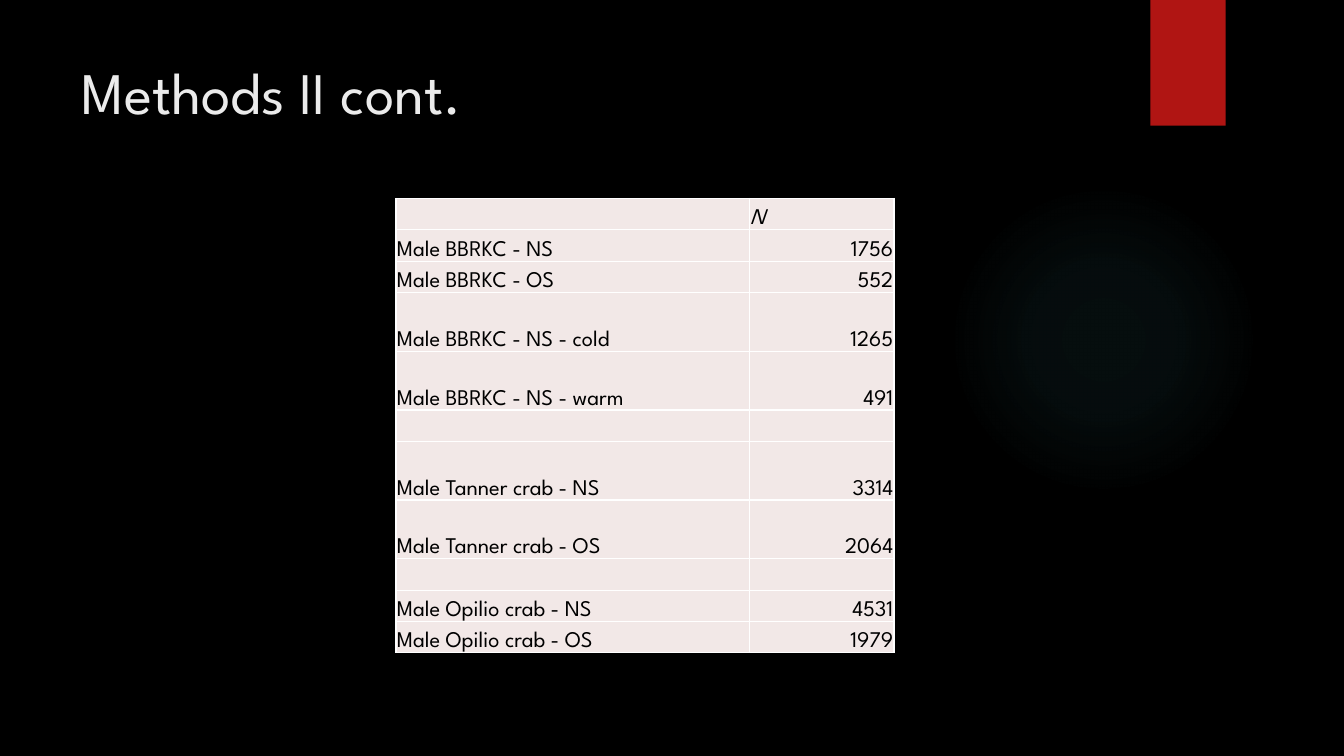
import pptx
import pptx.util
import pptx.oxml
import pptx.oxml.ns
import pptx.dml.color
import pptx.enum.shapes
import pptx.enum.text
from lxml import etree

Cm, Pt = pptx.util.Cm, pptx.util.Pt

HEADING = "Methods II cont."
SAMPLE_SIZES = [
    ("", "N"),
    ("Male BBRKC - NS", "1756"),
    ("Male BBRKC - OS", "552"),
    ("Male BBRKC - NS - cold", "1265"),
    ("Male BBRKC - NS - warm", "491"),
    ("", ""),
    ("Male Tanner crab - NS", "3314"),
    ("Male Tanner crab - OS", "2064"),
    ("", ""),
    ("Male Opilio crab - NS", "4531"),
    ("Male Opilio crab - OS", "1979"),
]
TALL_ROWS = {3, 4, 6, 7}
ROW_HEIGHT, TALL_HEIGHT = Cm(0.79), Cm(1.48)
COLUMN_WIDTHS = [Cm(8.9), Cm(3.65)]
FONT = "League Spartan"
COLOURS = {
    "background": "000000",
    "glow": "50B9C1",
    "tab": "B01513",
    "heading": "EBEBEB",
    "cell": "F2E8E7",
    "border": "FFFFFF",
    "text": "000000",
}
GLOW_STOPS = [(0, 7), (36, 6), (69, 0)]


def rgb(name):
    return pptx.dml.color.RGBColor.from_string(COLOURS[name])


def add_text(paragraph, text, size, colour, italic=False):
    run = paragraph.add_run()
    run.text = text
    run.font.name = FONT
    run.font.size = Pt(size)
    run.font.italic = italic
    run.font.color.rgb = rgb(colour)


def add_plain_shape(slide, kind, *box):
    shape = slide.shapes.add_shape(kind, *box)
    shape.shadow.inherit = False
    shape.line.fill.background()
    shape.fill.solid()
    return shape


def fill_with_glow(shape):
    stops = "".join(
        f'<a:gs pos="{position * 1000}"><a:srgbClr val="{COLOURS["glow"]}">'
        f'<a:alpha val="{alpha * 1000}"/></a:srgbClr></a:gs>'
        for position, alpha in GLOW_STOPS
    )
    gradient = pptx.oxml.parse_xml(
        f'<a:gradFill {pptx.oxml.ns.nsdecls("a")}><a:gsLst>{stops}</a:gsLst>'
        '<a:path path="circle"><a:fillToRect l="50000" t="50000" r="50000" b="50000"/>'
        "</a:path></a:gradFill>"
    )
    properties = shape._element.spPr
    properties.replace(properties.find(pptx.oxml.ns.qn("a:solidFill")), gradient)


def add_borders(cell):
    properties = cell._tc.get_or_add_tcPr()
    for index, side in enumerate(("lnL", "lnR", "lnT", "lnB")):
        properties.insert(index, pptx.oxml.parse_xml(
            f'<a:{side} {pptx.oxml.ns.nsdecls("a")} w="{Pt(1)}"><a:solidFill>'
            f'<a:srgbClr val="{COLOURS["border"]}"/></a:solidFill></a:{side}>'
        ))


def format_cell(cell, text, is_count, is_header):
    cell.fill.solid()
    cell.fill.fore_color.rgb = rgb("cell")
    cell.vertical_anchor = pptx.enum.text.MSO_ANCHOR.BOTTOM
    cell.margin_left = cell.margin_right = cell.margin_top = Cm(0.02)
    cell.margin_bottom = 0
    add_borders(cell)
    paragraph = cell.text_frame.paragraphs[0]
    if text:
        add_text(paragraph, text, 16, "text", italic=is_header)
    else:
        etree.SubElement(paragraph._p, pptx.oxml.ns.qn("a:endParaRPr"), sz="1600")
    if is_count and not is_header:
        paragraph.alignment = pptx.enum.text.PP_ALIGN.RIGHT


def add_sample_table(slide):
    heights = [TALL_HEIGHT if i in TALL_ROWS else ROW_HEIGHT for i in range(len(SAMPLE_SIZES))]
    table = slide.shapes.add_table(
        len(heights), len(COLUMN_WIDTHS), Cm(9.98), Cm(5), sum(COLUMN_WIDTHS), sum(heights)
    ).table
    table.first_row = table.horz_banding = False
    for column, width in zip(table.columns, COLUMN_WIDTHS):
        column.width = width
    for r, (height, entries) in enumerate(zip(heights, SAMPLE_SIZES)):
        table.rows[r].height = height
        for c, text in enumerate(entries):
            format_cell(table.cell(r, c), text, c == 1, r == 0)


def main():
    deck = pptx.Presentation()
    deck.slide_width, deck.slide_height = Cm(33.87), Cm(19.05)
    slide = deck.slides.add_slide(deck.slide_layouts[5])
    slide.background.fill.solid()
    slide.background.fill.fore_color.rgb = rgb("background")

    shapes = pptx.enum.shapes.MSO_SHAPE
    glow = add_plain_shape(slide, shapes.OVAL, Cm(23.9), Cm(4.65), Cm(7.82), Cm(7.82))
    fill_with_glow(glow)
    tab = add_plain_shape(slide, shapes.RECTANGLE, Cm(28.99), 0, Cm(1.9), Cm(3.17))
    tab.fill.fore_color.rgb = rgb("tab")

    heading = slide.shapes.title
    heading.left, heading.top = Cm(1.8), Cm(1.27)
    heading.width, heading.height = Cm(26.14), Cm(3.89)
    heading.text_frame.vertical_anchor = pptx.enum.text.MSO_ANCHOR.TOP
    paragraph = heading.text_frame.paragraphs[0]
    paragraph.alignment = pptx.enum.text.PP_ALIGN.LEFT
    add_text(paragraph, HEADING, 42, "heading")

    add_sample_table(slide)
    deck.save("out.pptx")


if __name__ == "__main__":
    main()
